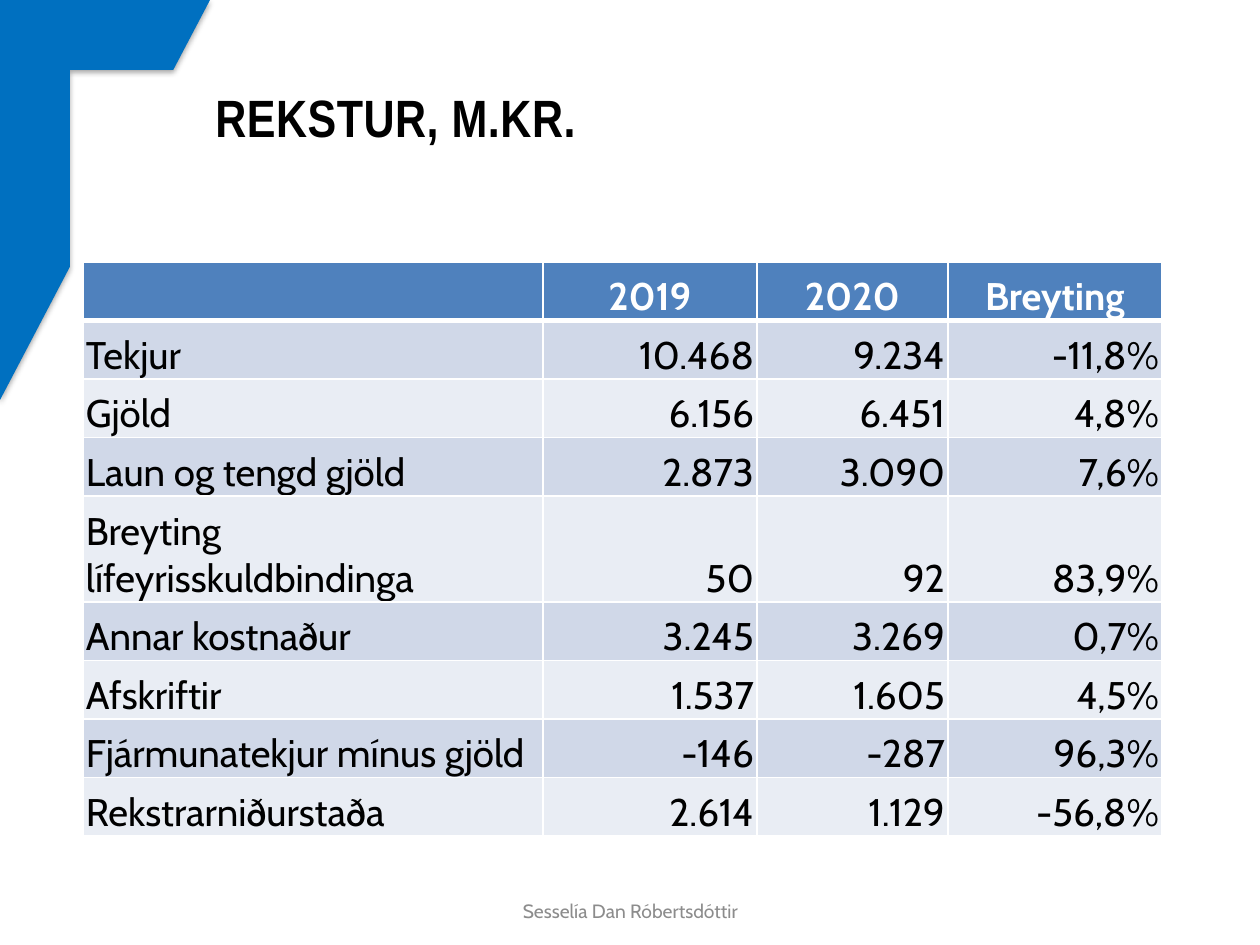
"""Build a slide with a table of operating results for 2019 and 2020."""
from lxml.etree import SubElement
from pptx import Presentation
from pptx.dml.color import RGBColor
from pptx.enum.shapes import MSO_SHAPE
from pptx.enum.text import MSO_ANCHOR, PP_ALIGN
from pptx.oxml import parse_xml
from pptx.oxml.ns import nsdecls, qn
from pptx.util import Emu, Pt

PX = 914400 // 126
COLORS = {
    "frame": "0070C0",
    "header": "4F81BD",
    "odd": "D0D8E8",
    "even": "E9EDF4",
    "white": "FFFFFF",
    "black": "000000",
    "grey": "8C8C8C",
}
ROWS = [
    ("", "2019", "2020", "Breyting"),
    ("Tekjur", "10.468", "9.234", "-11,8%"),
    ("Gjöld", "6.156", "6.451", "4,8%"),
    ("Laun og tengd gjöld", "2.873", "3.090", "7,6%"),
    ("Breyting \vlífeyrisskuldbindinga", "50", "92", "83,9%"),
    ("Annar kostnaður", "3.245", "3.269", "0,7%"),
    ("Afskriftir", "1.537", "1.605", "4,5%"),
    ("Fjármunatekjur mínus gjöld", "-146", "-287", "96,3%"),
    ("Rekstrarniðurstaða", "2.614", "1.129", "-56,8%"),
]
COL_WIDTHS = (460, 214, 191, 214)
TABLE_HEIGHT = 574
TALL_ROW = 106


def px(value):
    return Emu(round(value * PX))


def color(name):
    return RGBColor.from_string(COLORS[name])


def write(tf, text, size=22, font="Cabin", fill="black", bold=False,
          align=PP_ALIGN.LEFT, spacing=None, after=None):
    p = tf.paragraphs[0]
    p.text = text
    p.alignment = align
    if after is not None:
        p.space_after = Pt(after)
    for r in p.runs:
        r.font.size = Pt(size)
        r.font.name = font
        r.font.bold = bold
        r.font.color.rgb = color(fill)
        if spacing is not None:
            r.font._element.set("spc", str(round(spacing * 100)))


class SlideBuilder:
    def __init__(self, slide):
        self.s = slide

    def corner_frame(self, x, y, w, h):
        sp = self.s.shapes.add_shape(MSO_SHAPE.HALF_FRAME, px(x), px(y), px(w), px(h))
        sp.shadow.inherit = False
        sp.fill.solid()
        sp.fill.fore_color.rgb = color("frame")
        sp.line.fill.background()
        effects = sp._element.spPr.find(qn("a:effectLst"))
        shadow = SubElement(effects, qn("a:outerShdw"), blurRad=str(Pt(3.1)),
                            dist=str(Pt(1.8)), dir="5400000", rotWithShape="0")
        tone = SubElement(shadow, qn("a:srgbClr"), val=COLORS["black"])
        SubElement(tone, qn("a:alpha"), val="35000")

    def text(self, x, y, w, h, text, **style):
        tf = self.s.shapes.add_textbox(px(x), px(y), px(w), px(h)).text_frame
        tf.word_wrap = True
        tf.vertical_anchor = MSO_ANCHOR.MIDDLE
        write(tf, text, **style)

    def borders(self, cell, bottom):
        tc_pr = cell._tc.get_or_add_tcPr()
        widths = {"lnL": 1, "lnR": 1, "lnT": 1, "lnB": bottom}
        for i, (side, width) in enumerate(widths.items()):
            tc_pr.insert(i, parse_xml(
                f'<a:{side} {nsdecls("a")} w="{Pt(width)}"><a:solidFill>'
                f'<a:srgbClr val="{COLORS["white"]}"/></a:solidFill></a:{side}>'))

    def cell(self, cell, text, row, col):
        header = row == 0
        cell.margin_left = cell.margin_right = cell.margin_top = px(3)
        cell.margin_bottom = 0
        cell.vertical_anchor = MSO_ANCHOR.BOTTOM
        cell.fill.solid()
        cell.fill.fore_color.rgb = color("header" if header else ("even", "odd")[row % 2])
        self.borders(cell, bottom=3 if header else 1)
        align = PP_ALIGN.CENTER if header else PP_ALIGN.RIGHT if col else PP_ALIGN.LEFT
        write(cell.text_frame, text, fill="white" if header else "black",
              bold=header, align=align)

    def table(self, x, y, rows):
        table = self.s.shapes.add_table(
            len(rows), len(COL_WIDTHS), px(x), px(y),
            px(sum(COL_WIDTHS)), px(TABLE_HEIGHT)).table
        table.horz_banding = False
        for column, width in zip(table.columns, COL_WIDTHS):
            column.width = px(width)
        row_height = (TABLE_HEIGHT - TALL_ROW) / (len(rows) - 1)
        for i, values in enumerate(rows):
            table.rows[i].height = px(TALL_ROW if "\v" in values[0] else row_height)
            for j, value in enumerate(values):
                self.cell(table.cell(i, j), value, i, j)


def main():
    prs = Presentation()
    prs.slide_width, prs.slide_height = px(1260), px(945)
    slide = SlideBuilder(prs.slides.add_slide(prs.slide_layouts[6]))
    slide.corner_frame(0, 0, 210, 400)
    slide.text(203, 38, 1017, 157, "REKSTUR, M.KR.", size=30,
               font="Arial Narrow", bold=True, spacing=0.3)
    slide.text(431, 891, 399, 40, "Sesselía Dan Róbertsdóttir", size=11,
               fill="grey", align=PP_ALIGN.CENTER, after=6)
    slide.table(83, 262, ROWS)
    prs.save("out.pptx")


if __name__ == "__main__":
    main()
